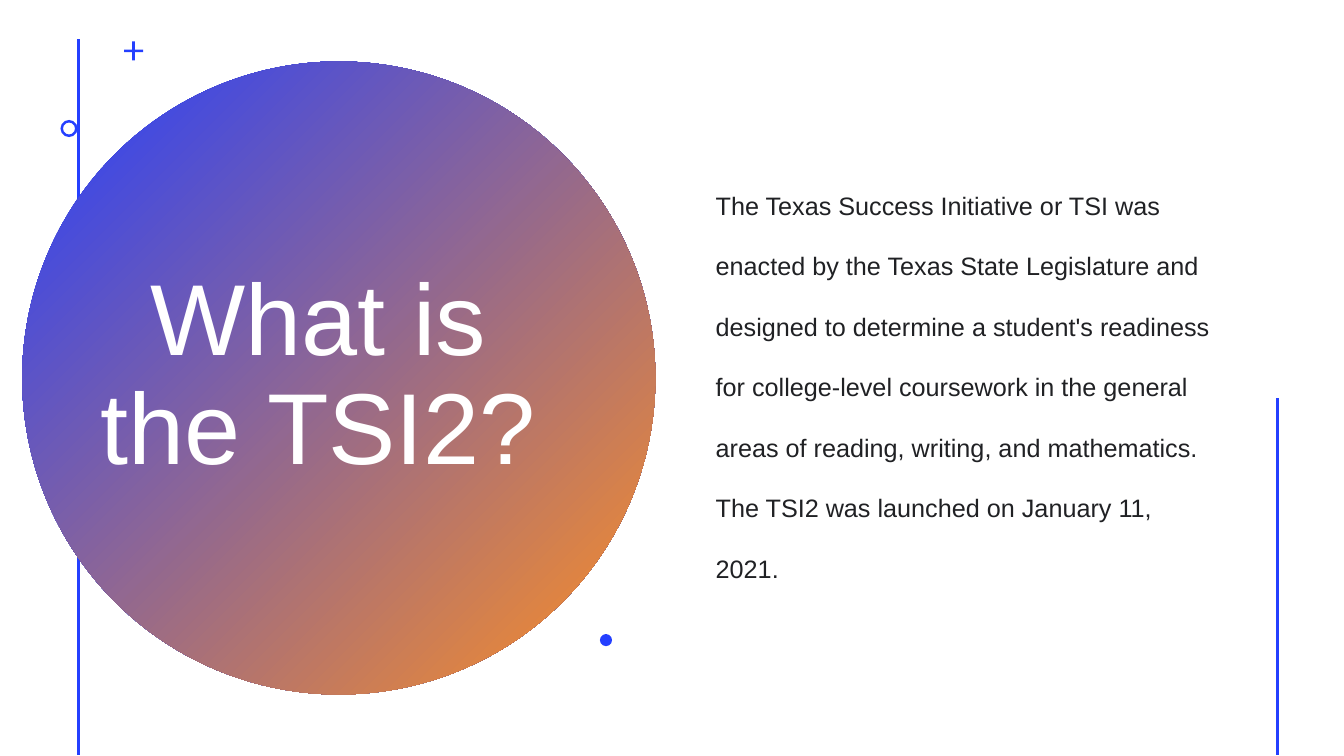
from lxml import etree
from pptx import Presentation
from pptx.dml.color import RGBColor
from pptx.enum.shapes import MSO_CONNECTOR, MSO_SHAPE
from pptx.enum.text import MSO_ANCHOR, MSO_AUTO_SIZE, PP_ALIGN
from pptx.oxml.ns import qn
from pptx.util import Inches, Pt

STRAIGHT = MSO_CONNECTOR.STRAIGHT
OVAL, DONUT, CROSS = MSO_SHAPE.OVAL, MSO_SHAPE.DONUT, MSO_SHAPE.CROSS
MIDDLE = MSO_ANCHOR.MIDDLE
NO_AUTOFIT = MSO_AUTO_SIZE.NONE
LEFT, CENTER = PP_ALIGN.LEFT, PP_ALIGN.CENTER

BLUE = RGBColor(0x24, 0x3F, 0xFF)
ORANGE = RGBColor(0xFF, 0x90, 0x22)
WHITE = RGBColor(0xFF, 0xFF, 0xFF)
INK = RGBColor(0x20, 0x21, 0x24)

TITLE = "What is the TSI2?"
BODY = (
    "The Texas Success Initiative or TSI was enacted by the Texas State "
    "Legislature and designed to determine a student's readiness for "
    "college-level coursework in the general areas of reading, writing, and "
    "mathematics. The TSI2 was launched on January 11, 2021."
)


def add_vertical_rule(slide, x, top, bottom):
    rule = slide.shapes.add_connector(
        STRAIGHT, Inches(x), Inches(top), Inches(x), Inches(bottom))
    rule.line.color.rgb = BLUE
    rule.line.width = Pt(2)
    etree.SubElement(rule.element.spPr, qn("a:effectLst"))


def add_accent(slide, kind, left, top, size, adjustment=None):
    shape = slide.shapes.add_shape(
        kind, Inches(left), Inches(top), Inches(size), Inches(size))
    shape.shadow.inherit = False
    shape.line.fill.background()
    shape.fill.solid()
    shape.fill.fore_color.rgb = BLUE
    if adjustment is not None:
        shape.adjustments[0] = adjustment
    return shape


def set_text(shape, text, size, color, alignment, line_spacing):
    frame = shape.text_frame
    frame.text = text
    frame.word_wrap = True
    frame.auto_size = NO_AUTOFIT
    frame.vertical_anchor = MIDDLE
    paragraph = frame.paragraphs[0]
    paragraph.alignment = alignment
    paragraph.line_spacing = line_spacing
    paragraph.font.name = "Arial"
    paragraph.font.size = Pt(size)
    paragraph.font.color.rgb = color
    return paragraph


def add_title_disc(slide, left, top, size):
    # Gradient disc
    disc = add_accent(slide, OVAL, left, top, size)
    disc.fill.gradient()
    disc.fill.gradient_angle = 315
    for stop, color, position in zip(
            disc.fill.gradient_stops, (BLUE, ORANGE), (0, 1)):
        stop.color.rgb = color
        stop.position = position

    # Title, raised above the disc
    title = slide.shapes.title
    title.left, title.top = Inches(left + 0.44), Inches(top + 0.8)
    title.width, title.height = Inches(5), Inches(4.67)
    set_text(title, TITLE, 72, WHITE, CENTER, 0.9)
    title.element.getparent().append(title.element)

    # Small accents around the disc
    add_accent(slide, CROSS, left + 1.01, top - 0.2, 0.19, 0.43)
    add_accent(slide, DONUT, left + 0.38, top + 0.58, 0.17, 0.15)
    add_accent(slide, OVAL, left + 5.73, top + 5.68, 0.12)


def add_body(slide, left, top, width, height):
    box = slide.shapes.add_textbox(
        Inches(left), Inches(top), Inches(width), Inches(height))
    paragraph = set_text(box, BODY, 18, INK, LEFT, 2.0)
    paragraph.space_before = Pt(10)


def main():
    presentation = Presentation()
    presentation.slide_width = Inches(13.33)
    presentation.slide_height = Inches(7.5)
    title_only = presentation.slide_layouts[5]
    slide = presentation.slides.add_slide(title_only)

    add_vertical_rule(slide, 0.78, 0.39, 7.49)
    add_title_disc(slide, 0.22, 0.61, 6.28)
    add_body(slide, 7, 0.42, 5.12, 6.53)
    add_vertical_rule(slide, 12.67, 3.95, 7.49)

    presentation.save("out.pptx")


if __name__ == "__main__":
    main()
